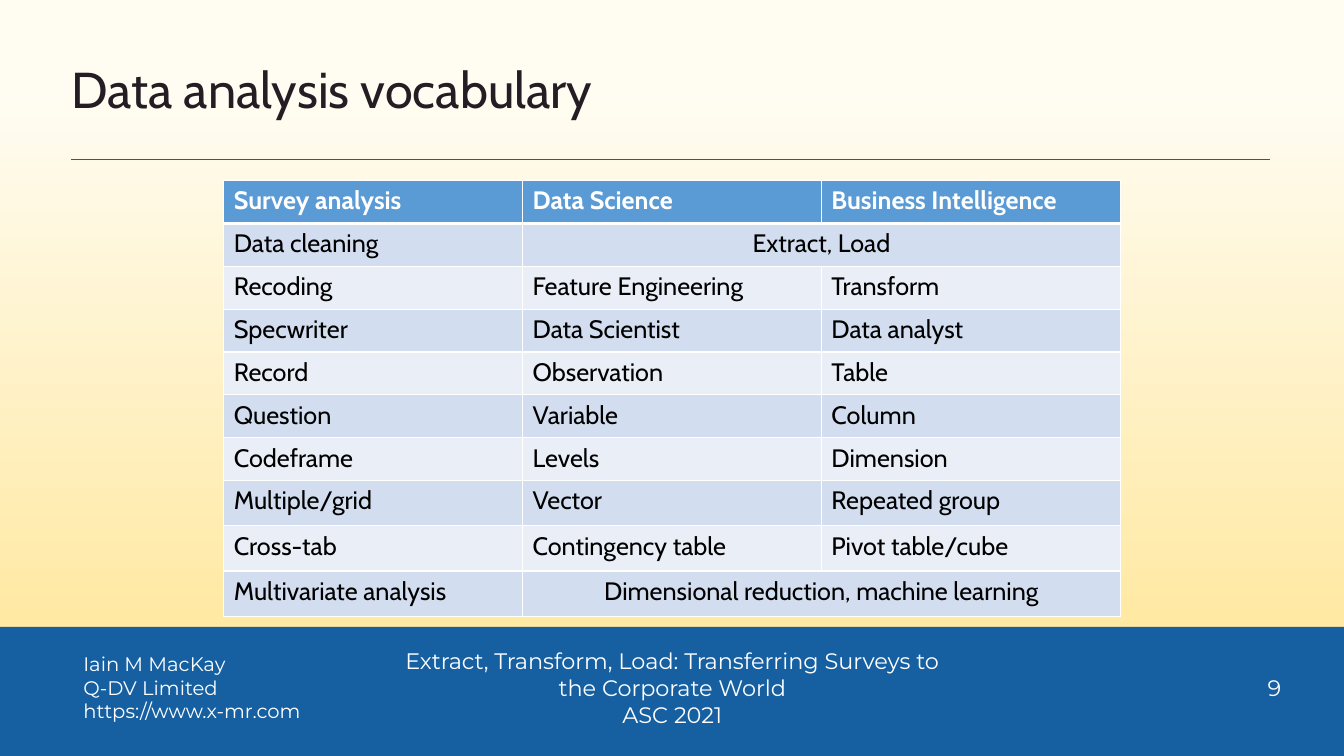
from pptx import Presentation
from pptx.dml.color import RGBColor
from pptx.enum.shapes import MSO_CONNECTOR as Connector, MSO_SHAPE as Shape
from pptx.enum.text import MSO_ANCHOR as Anchor, MSO_AUTO_SIZE as AutoSize, PP_ALIGN as Align
from pptx.oxml.ns import qn
from pptx.util import Cm, Pt
from lxml import etree

COLORS = {
    "sky_top": "FFFCF2", "sky_bottom": "FFE699", "footer": "1660A2",
    "ink": "241E24", "black": "000000", "white": "FFFFFF",
    "header": "5B9BD5", "band_dark": "D2DEEF", "band_light": "EAEFF7",
}
WIDTH, HEIGHT = 33.87, 19.05
FOOTER_TOP = 15.8

# None continues the cell on its left
VOCABULARY = [
    ("Survey analysis", "Data Science", "Business Intelligence"),
    ("Data cleaning", "Extract, Load", None),
    ("Recoding", "Feature Engineering", "Transform"),
    ("Specwriter", "Data Scientist", "Data analyst"),
    ("Record", "Observation", "Table"),
    ("Question", "Variable", "Column"),
    ("Codeframe", "Levels", "Dimension"),
    ("Multiple/grid", "Vector", "Repeated group"),
    ("Cross-tab", "Contingency table", "Pivot table/cube"),
    ("Multivariate analysis", "Dimensional reduction, machine learning", None),
]


def color(name):
    return RGBColor.from_string(COLORS[name])


class SlideBuilder:
    heading_font = "Cabin"
    footer_font = "Montserrat"

    def __init__(self, page):
        self.page = page

    def background(self, top, bottom):
        fill = self.page.background.fill
        fill.gradient()
        fill.gradient_angle = 270
        for stop, position, name in zip(fill.gradient_stops, (0.12, 0.91), (top, bottom)):
            stop.position = position
            stop.color.rgb = color(name)

    def bar(self, left, top, width, height, fill):
        bar = self.page.shapes.add_shape(Shape.RECTANGLE, Cm(left), Cm(top), Cm(width), Cm(height))
        bar.shadow.inherit = False
        bar.fill.solid()
        bar.fill.fore_color.rgb = color(fill)
        bar.line.fill.background()

    def rule(self, left, right, y, name):
        line = self.page.shapes.add_connector(Connector.STRAIGHT, Cm(left), Cm(y), Cm(right), Cm(y))
        line.line.color.rgb = color(name)
        line.line.width = Pt(0.5)
        etree.SubElement(line._element.spPr, qn("a:effectLst"))

    def style(self, para, font, size, name, bold=False, align=Align.LEFT):
        para.alignment = align
        for span in para.runs:
            span.font.name = font
            span.font.size = Pt(size)
            span.font.bold = bold
            span.font.color.rgb = color(name)

    def text_box(self, left, top, width, height, text):
        box = self.page.shapes.add_textbox(Cm(left), Cm(top), Cm(width), Cm(height))
        frame = box.text_frame
        frame.word_wrap = True
        frame.text = text
        return frame

    def title(self, left, top, width, height, text):
        frame = self.text_box(left, top, width, height, text)
        frame.margin_left = frame.margin_right = frame.margin_top = frame.margin_bottom = 0
        frame.vertical_anchor = Anchor.MIDDLE
        para = frame.paragraphs[0]
        para.line_spacing = 0.9
        self.style(para, self.heading_font, 36, "ink")

    def footer_text(self, left, top, width, height, text, size, align):
        frame = self.text_box(left, top, width, height, text)
        frame.auto_size = AutoSize.SHAPE_TO_FIT_TEXT
        for para in frame.paragraphs:
            self.style(para, self.footer_font, size, "white", align=align)

    def borders(self, cell, bottom):
        properties = cell._tc.get_or_add_tcPr()
        for side, width in (("L", 1), ("R", 1), ("T", 1), ("B", bottom)):
            line = etree.SubElement(properties, qn(f"a:ln{side}"), w=str(Pt(width)))
            fill = etree.SubElement(line, qn("a:solidFill"))
            etree.SubElement(fill, qn("a:srgbClr"), val=COLORS["white"])

    def table(self, left, top, column_width, row_heights, rows):
        columns = len(rows[0])
        table = self.page.shapes.add_table(
            len(rows), columns, Cm(left), Cm(top),
            Cm(column_width * columns), Cm(sum(row_heights))).table
        for column in table.columns:
            column.width = Cm(column_width)
        for r, (texts, height) in enumerate(zip(rows, row_heights)):
            table.rows[r].height = Cm(height)
            is_header = r == 0
            fill = "header" if is_header else "band_dark" if r % 2 else "band_light"
            for c, text in enumerate(texts):
                cell = table.cell(r, c)
                self.borders(cell, 3 if is_header else 1)
                cell.fill.solid()
                cell.fill.fore_color.rgb = color(fill)
                if text is None:
                    table.cell(r, c - 1).merge(cell)
                    continue
                cell.text = text
                spans_two = c + 1 < columns and texts[c + 1] is None
                self.style(cell.text_frame.paragraphs[0], self.heading_font, 18,
                           "white" if is_header else "black", is_header,
                           Align.CENTER if spans_two else Align.LEFT)


def main():
    deck = Presentation()
    deck.slide_width, deck.slide_height = Cm(WIDTH), Cm(HEIGHT)
    builder = SlideBuilder(deck.slides.add_slide(deck.slide_layouts[6]))

    # Backdrop
    builder.background("sky_top", "sky_bottom")
    builder.bar(0, FOOTER_TOP, WIDTH, HEIGHT - FOOTER_TOP, "footer")
    builder.rule(1.8, 32, 4.01, "footer")

    # Footer
    builder.footer_text(1.85, 16.31, 9.4, 2.06,
                        "Iain M MacKay\nQ-DV Limited\nhttps://www.x-mr.com", 14, Align.LEFT)
    builder.footer_text(9.91, 16.18, 14.07, 2.31,
                        "Extract, Transform, Load: Transferring Surveys to the Corporate World\nASC 2021",
                        16, Align.CENTER)
    builder.footer_text(26.77, 16.87, 5.77, 0.94, "9", 16, Align.RIGHT)

    # Title and vocabulary table
    builder.title(1.8, 1.02, 24.97, 2.59, "Data analysis vocabulary")
    builder.table(5.64, 4.55, 7.53, [1.08] * 7 + [1.14] * 3, VOCABULARY)

    deck.save("out.pptx")


if __name__ == "__main__":
    main()
